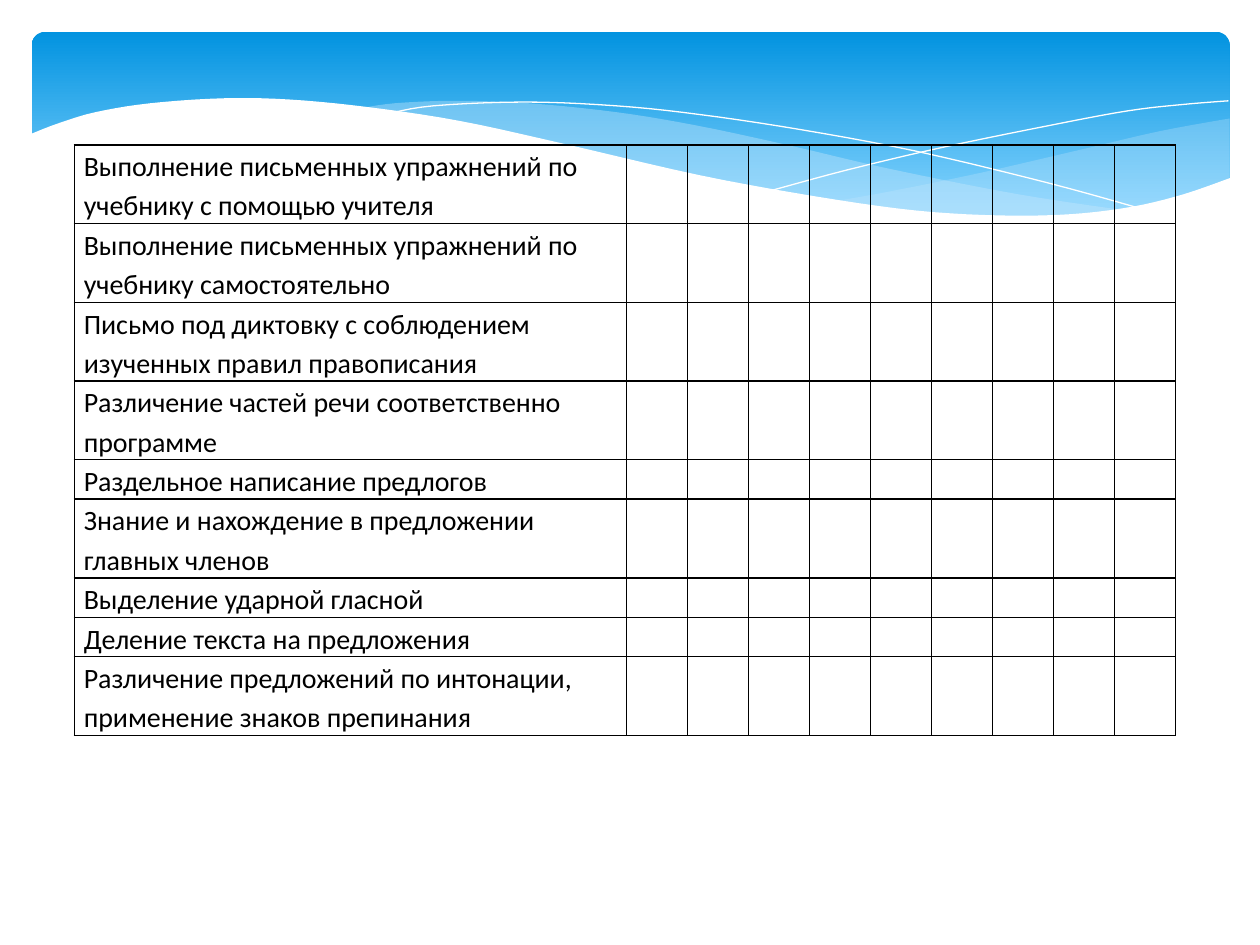
from lxml import etree
from pptx import Presentation
from pptx.dml.color import RGBColor
from pptx.enum.shapes import MSO_SHAPE
from pptx.oxml.ns import qn
from pptx.util import Cm, Pt

ROUND = MSO_SHAPE.ROUNDED_RECTANGLE
HUES = {"top": "0293E0", "low": "83D3FE", "pale": "C6E7FC",
        "white": "FFFFFF", "black": "000000"}

# Content: one row per skill, with the number of text lines it takes
SKILLS = [
    ("Выполнение письменных упражнений по учебнику с помощью учителя", 2),
    ("Выполнение письменных упражнений по учебнику самостоятельно", 2),
    ("Письмо под диктовку с соблюдением изученных правил правописания", 2),
    ("Различение частей речи соответственно программе", 2),
    ("Раздельное написание предлогов", 1),
    ("Знание и нахождение в предложении главных членов", 2),
    ("Выделение ударной гласной", 1),
    ("Деление текста на предложения", 1),
    ("Различение предложений по интонации, применение знаков препинания", 2),
]
MARKS = 9  # empty columns for marks
CELL = {"margin_left": Cm(0.19), "margin_right": Cm(0.19),
        "margin_top": 0, "margin_bottom": 0}
FONT = {"name": "Calibri", "size": Pt(16)}

# Waves: curves as knots in inches, each joined smoothly to the next
WAVES = [
    {"fill": "pale", "alpha": 29, "curves": [
        [(9.76, 0.94), (9.21, 1.04), (8.61, 1.18), (7.79, 1.37),
         (7.06, 1.52), (6.61, 1.6)],
        [(6.61, 1.6), (7.05, 1.65), (7.57, 1.7), (8.14, 1.72), (8.63, 1.7),
         (9.05, 1.63), (9.42, 1.54), (9.76, 1.41)]]},
    {"fill": "pale", "alpha": 40, "curves": [
        [(8.93, 1.67), (8.07, 1.54), (7.06, 1.34), (6.29, 1.16), (5.55, 1),
         (4.89, 0.89), (4.2, 0.82), (3.61, 0.8), (3.13, 0.82), (2.86, 0.86)],
        [(2.86, 0.86), (3.62, 0.97), (4.49, 1.16), (5.3, 1.35), (6.01, 1.5),
         (6.65, 1.61), (7.36, 1.69), (7.96, 1.73), (8.48, 1.72),
         (8.93, 1.67)]]},
    {"line": "white", "curves": [
        [(3.09, 0.9), (3.44, 0.84), (4.16, 0.81), (4.89, 0.84), (5.56, 0.91),
         (6.36, 1.03), (7.27, 1.2), (8.31, 1.45), (9.07, 1.66)]]},
    {"line": "white", "curves": [
        [(6.13, 1.51), (6.72, 1.35), (7.48, 1.17), (8.36, 0.99), (8.95, 0.88),
         (9.38, 0.83), (9.75, 0.8)]]},
    {"fill": "white", "curves": [
        [(9.77, 1.41), (9.4, 1.54), (8.99, 1.64), (8.5, 1.7), (7.93, 1.71),
         (7.26, 1.67), (6.48, 1.56), (5.55, 1.39), (4.47, 1.14), (3.65, 0.96),
         (2.92, 0.85), (2.3, 0.79), (1.77, 0.78), (1.19, 0.82), (0.76, 0.89),
         (0.46, 0.98), (0.23, 1.07)],
        [(0.23, 2.24)], [(9.77, 2.24)]]},
]


def rgb(hue):
    return RGBColor.from_string(HUES[hue])


def inch(val):
    return int(Cm(val * 2.54))


def curve(knots, steps=5):
    """Points of a smooth spline through the knots."""
    ends = [knots[0], *knots, knots[-1]]
    pts = [knots[0]]
    for a, b, c, d in zip(ends, ends[1:], ends[2:], ends[3:]):
        for i in range(1, steps + 1):
            t = i / steps
            pts.append(tuple(
                q + t / 2 * (r - p + t * (2 * p - 5 * q + 4 * r - s
                                          + t * (3 * (q - r) + s - p)))
                for p, q, r, s in zip(a, b, c, d)))
    return pts


def wave(shapes, look):
    pts = [(inch(x), inch(y)) for part in look["curves"] for x, y in curve(part)]
    pen = shapes.build_freeform(*pts[0], scale=1.0)
    pen.add_line_segments(pts[1:], close="fill" in look)
    form = pen.convert_to_shape()
    form.shadow.inherit = False
    if "line" in look:
        form.fill.background()
        form.line.color.rgb = rgb(look["line"])
        form.line.width = Pt(0)
        return
    form.line.fill.background()
    form.fill.solid()
    form.fill.fore_color.rgb = rgb(look["fill"])
    if "alpha" in look:
        tint = form.fill._xPr.find(".//" + qn("a:srgbClr"))
        etree.SubElement(tint, qn("a:alpha"), val=str(look["alpha"] * 1000))


def border(cell):
    props = cell._tc.get_or_add_tcPr()
    for side in "LRTB":
        edge = etree.SubElement(props, qn("a:ln" + side), w=str(Pt(1)))
        fill = etree.SubElement(edge, qn("a:solidFill"))
        etree.SubElement(fill, qn("a:srgbClr"), val=HUES["black"])


def main():
    deck = Presentation()
    deck.slide_width, deck.slide_height = Cm(25.4), Cm(19.05)
    shapes = deck.slides.add_slide(deck.slide_layouts[6]).shapes

    # Blue band
    band = shapes.add_shape(ROUND, Cm(0.64), Cm(0.64), Cm(24.15), Cm(3.96))
    band.adjustments[0] = 0.07
    band.shadow.inherit = False
    band.line.fill.background()
    band.fill.gradient()
    band.fill.gradient_angle = 270
    for stop, hue, pos in zip(band.fill.gradient_stops, ("top", "low"), (0, 0.9)):
        stop.color.rgb = rgb(hue)
        stop.position = pos

    for look in WAVES:
        wave(shapes, look)

    # Skills table
    row_h = Cm(0.79)
    total = row_h * sum(n for _, n in SKILLS)
    grid = shapes.add_table(len(SKILLS), MARKS + 1, Cm(1.5), Cm(2.92),
                            Cm(22.2), total).table
    grid.first_row = grid.horz_banding = False
    for i, col in enumerate(grid.columns):
        col.width = Cm(1.23) if i else Cm(11.13)
    for row, (text, lines) in zip(grid.rows, SKILLS):
        row.height = row_h * lines
        for cell in row.cells:
            border(cell)
            cell.fill.background()
            for key, val in CELL.items():
                setattr(cell, key, val)
        para = row.cells[0].text_frame.paragraphs[0]
        para.line_spacing = 1.15
        run = para.add_run()
        run.text = text
        run.font.color.rgb = rgb("black")
        for key, val in FONT.items():
            setattr(run.font, key, val)

    deck.save("out.pptx")


if __name__ == "__main__":
    main()
